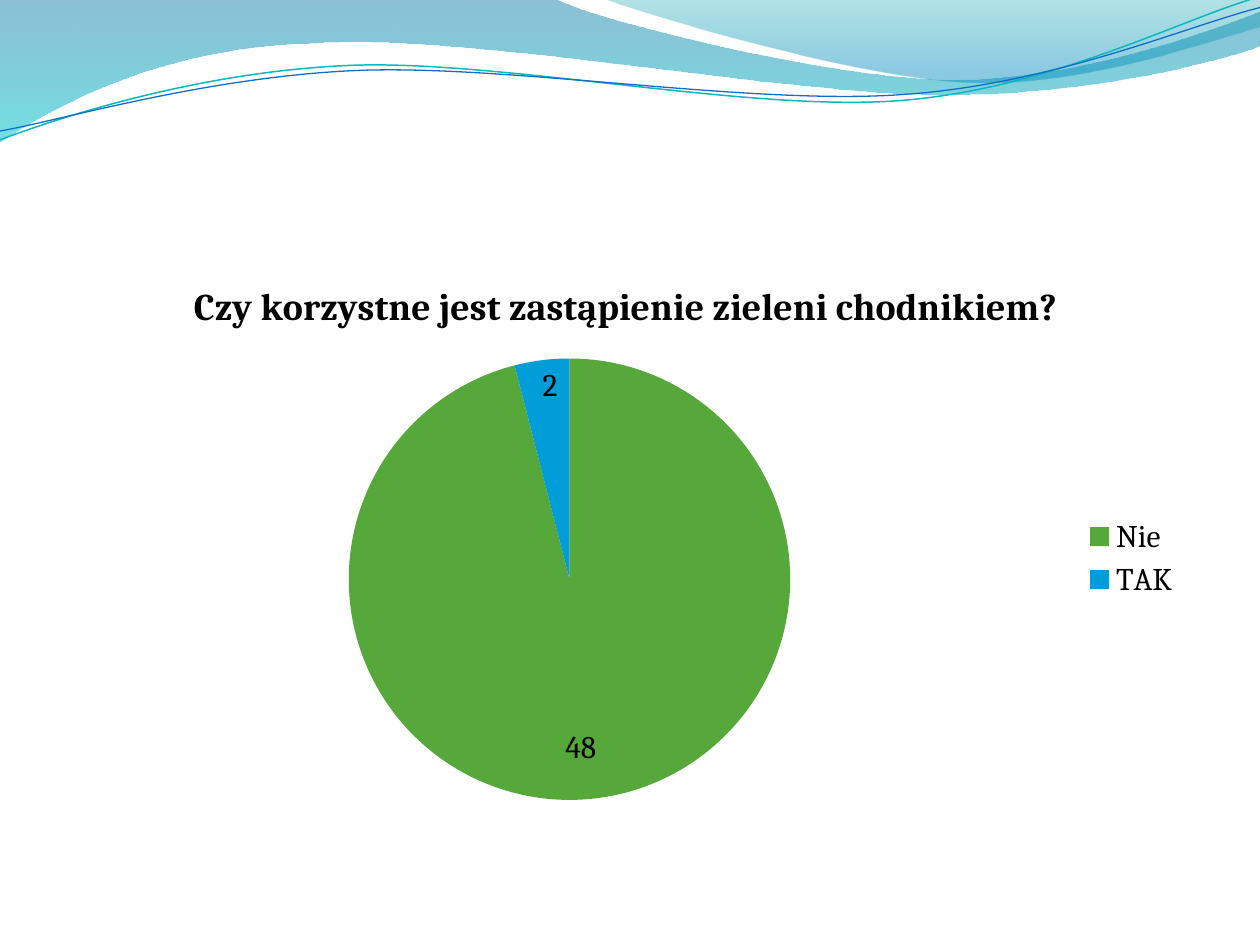
from lxml import etree
from pptx import Presentation
from pptx import util as u
from pptx.chart.data import CategoryChartData
from pptx.dml.color import RGBColor
from pptx.enum import chart as charts
from pptx.oxml import parse_xml
from pptx.oxml.ns import nsdecls, qn


def colour(code):
    return RGBColor.from_string(code)


def add_curves(page, start, pieces):
    """Draw pieces of 2 numbers (line) or 6 numbers (cubic curve), in inches."""
    corners = [start]
    for piece in pieces:
        corners += zip(piece[::2], piece[1::2])
    corners = [(u.Inches(x), u.Inches(y)) for x, y in corners]
    builder = page.shapes.build_freeform(*corners[0])
    builder.add_line_segments(corners[1:], close=corners[0] == corners[-1])
    shape = builder.convert_to_shape()
    shape.shadow.inherit = False
    # Join the three segments of each cubic piece into one real curve
    segments = iter(list(shape._element.iter(qn("a:lnTo"))))
    for piece in pieces:
        first = next(segments)
        if len(piece) == 6:
            first.tag = qn("a:cubicBezTo")
            for _ in range(2):
                extra = next(segments)
                first.append(extra[0])
                extra.getparent().remove(extra)
    return shape


deck = Presentation()
deck.slide_width, deck.slide_height = u.Inches(10), u.Inches(7.5)
page = deck.slides.add_slide(deck.slide_layouts[6])

# Translucent waves: start, pieces, gradient stops (position, colour, opacity %)
waves = [
    ((0, 0),
     [(4.4, -0.01), (4.76, 0.17, 6.64, 0.63, 7.58, 0.63),
      (8.53, 0.63, 9.58, 0.26, 10, 0.09), (10.01, 0.36),
      (9.83, 0.44, 8.7, 0.76, 7.46, 0.75), (6.22, 0.75, 3.82, 0.28, 2.57, 0.34),
      (1.29, 0.36, 0.46, 0.83, -0.01, 1.13), (0, 0)],
     [(0, "0074A1", 45), (1, "00C6CF", 55)]),
    ((4.79, -0.01),
     [(5.09, 0.11, 6.82, 0.62, 7.69, 0.65), (8.56, 0.69, 9.61, 0.32, 10, 0.21),
      (10, 0), (4.79, -0.01)],
     [(0, "00A1A9", 30), (0.8, "008BBF", 45)]),
]
for start, pieces, stops in waves:
    wave = add_curves(page, start, pieces)
    wave.line.fill.background()
    wave.fill.gradient()
    wave.fill.gradient_angle = 270
    for stop, (position, code, _) in zip(wave.fill.gradient_stops, stops):
        stop.position = position
        stop.color.rgb = colour(code)
    for tint, (_, _, opacity) in zip(wave._element.iter(qn("a:srgbClr")), stops):
        etree.SubElement(tint, qn("a:alpha"), val=str(opacity * 1000))

# Thin lines that follow the waves
strands = [
    ((0, 1.11),
     [(0.48, 0.93, 1.58, 0.57, 2.77, 0.52), (3.95, 0.47, 5.93, 0.89, 7.13, 0.8),
      (8.33, 0.71, 9.38, 0.15, 9.98, -0.02)], "0AB8BF", 0.85),
    ((0, 1.04),
     [(0.47, 0.96, 1.64, 0.61, 2.83, 0.56), (4.03, 0.51, 5.97, 0.84, 7.17, 0.75),
      (8.36, 0.67, 9.41, 0.21, 10, 0.06)], "0F6FC6", 0.75),
]
for start, pieces, code, width in strands:
    strand = add_curves(page, start, pieces)
    strand.fill.background()
    strand.line.color.rgb = colour(code)
    strand.line.width = u.Pt(width)

# Survey result
question = "Czy korzystne jest zastąpienie zieleni chodnikiem?"
data = CategoryChartData()
data.categories = ["Nie", "TAK"]
data.add_series(question, [48, 2])
chart = page.shapes.add_chart(
    charts.XL_CHART_TYPE.PIE, u.Inches(0.47), u.Inches(2.03),
    u.Inches(9), u.Inches(4.8), data).chart
chart.font.name = "Cambria"
chart.font.size = u.Pt(18)
chart.font.color.rgb = colour("000000")

chart.has_title = True
chart.chart_title.include_in_layout = False
chart.chart_title.text_frame.text = question
title_font = chart.chart_title.text_frame.paragraphs[0].runs[0].font
title_font.name = "Cambria"
title_font.size = u.Pt(21.6)
title_font.bold = True
title_font.color.rgb = colour("000000")

chart.has_legend = True
chart.legend.position = charts.XL_LEGEND_POSITION.RIGHT
chart.legend.include_in_layout = False

plot = chart.plots[0]
plot.vary_by_categories = True
pie = plot.series[0]
for index, code in enumerate(["55A839", "009DD9"]):
    fill = pie.points[index].format.fill
    fill.solid()
    fill.fore_color.rgb = colour(code)
pie.data_labels.show_value = True
pie.data_labels.position = charts.XL_LABEL_POSITION.INSIDE_END
pie.points[0].data_label.position = charts.XL_LABEL_POSITION.INSIDE_END

# Place the pie, and lift the larger slice's label, in fractions of the chart
area = chart._chartSpace.find(".//" + qn("c:plotArea"))
for old in area.findall(qn("c:layout")):
    area.remove(old)
area.insert(0, parse_xml(
    f'<c:layout {nsdecls("c")}><c:manualLayout><c:layoutTarget val="inner"/>'
    '<c:xMode val="edge"/><c:yMode val="edge"/><c:x val="0.25"/><c:y val="0.17"/>'
    '<c:w val="0.4"/><c:h val="0.73"/></c:manualLayout></c:layout>'))
label = area.find(".//" + qn("c:dLbl"))
label.insert(1, parse_xml(
    f'<c:layout {nsdecls("c")}><c:manualLayout>'
    '<c:x val="0"/><c:y val="-0.04"/></c:manualLayout></c:layout>'))

deck.save("out.pptx")
